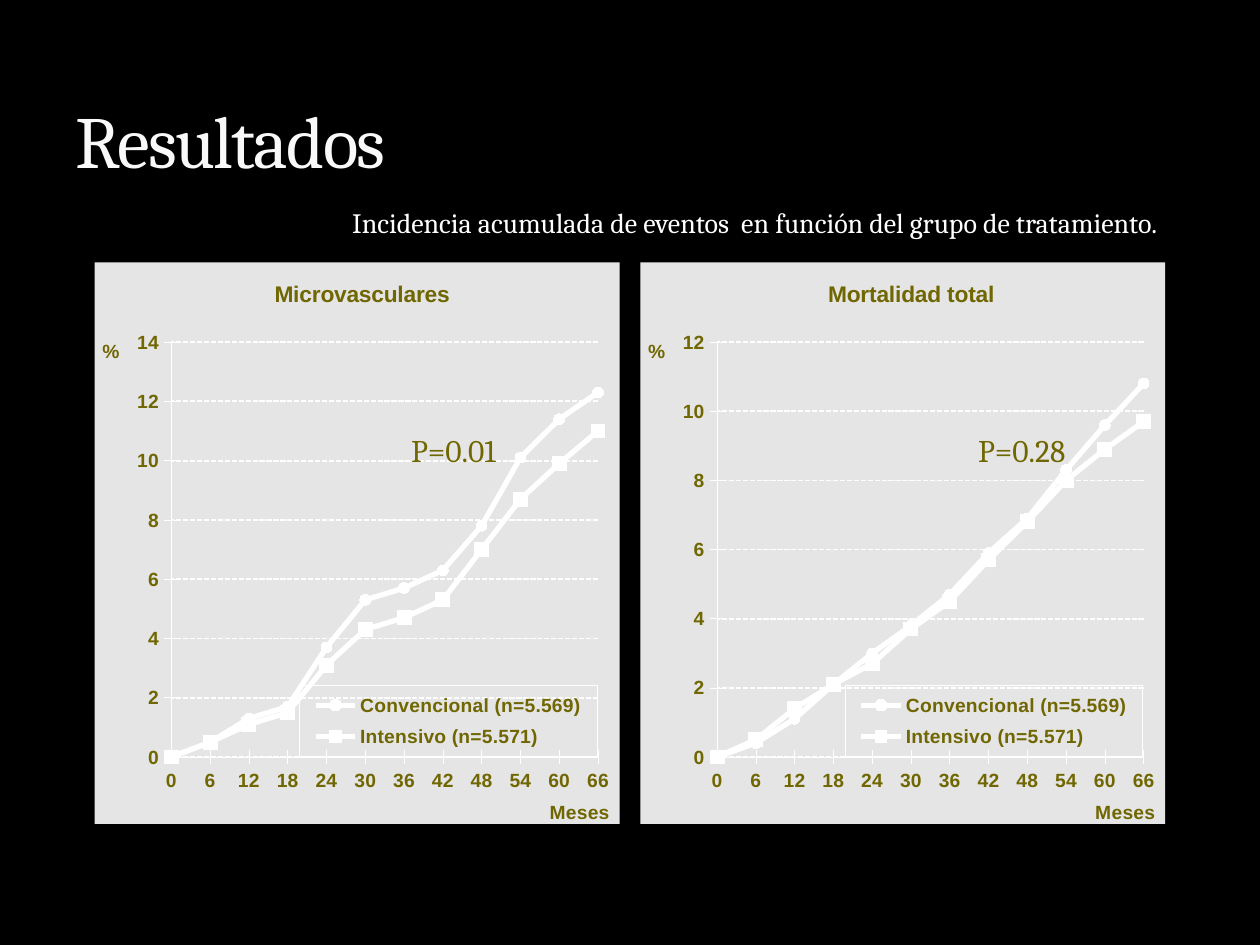
from lxml.etree import SubElement
from pptx import Presentation
from pptx.chart.data import CategoryChartData
from pptx.dml.color import RGBColor
from pptx.enum.chart import XL_CHART_TYPE as ChartType, XL_LEGEND_POSITION as LegendPosition
from pptx.enum.chart import XL_MARKER_STYLE as Marker, XL_TICK_MARK as TickMark
from pptx.enum.dml import MSO_LINE_DASH_STYLE as Dash
from pptx.enum.text import MSO_ANCHOR as Anchor, PP_ALIGN as Align
from pptx.oxml import parse_xml
from pptx.oxml.ns import nsdecls, qn
from pptx.util import Cm, Pt

BLACK = RGBColor(0x00, 0x00, 0x00)
WHITE = RGBColor(0xFF, 0xFF, 0xFF)
OFF_WHITE = RGBColor(0xF9, 0xF9, 0xF9)
OLIVE = RGBColor(0x70, 0x67, 0x02)
GREY = RGBColor(0xE5, 0xE5, 0xE5)

TITLE = "Resultados"
SUBTITLE = "Incidencia acumulada de eventos  en función del grupo de tratamiento. "
MONTHS = [str(month) for month in range(0, 67, 6)]
GROUPS = [
    ("Convencional (n=5.569)", Marker.CIRCLE, 6),
    ("Intensivo (n=5.571)", Marker.SQUARE, 8),
]
PANELS = [
    {
        "title": "Microvasculares", "title_x": 0.335, "maximum": 14,
        "p_value": "P=0.01", "p_left": 8.04,
        "values": [
            (0, 0.5, 1.3, 1.7, 3.7, 5.3, 5.7, 6.3, 7.8, 10.1, 11.4, 12.3),
            (0, 0.5, 1.1, 1.5, 3.1, 4.3, 4.7, 5.3, 7, 8.7, 9.9, 11),
        ],
    },
    {
        "title": "Mortalidad total", "title_x": 0.35, "maximum": 12,
        "p_value": "P=0.28", "p_left": 19.47,
        "values": [
            (0, 0.4, 1.1, 2.1, 3, 3.8, 4.7, 5.9, 6.9, 8.3, 9.6, 10.8),
            (0, 0.5, 1.4, 2.1, 2.7, 3.7, 4.5, 5.7, 6.8, 8, 8.9, 9.7),
        ],
    },
]
CHART_LEFT, CHART_TOP, CHART_WIDTH, CHART_HEIGHT = 1.91, 5.29, 10.58, 11.43
CHART_PITCH = 11


def add_text(slide, text, box, size, color, align=Align.LEFT, anchor=Anchor.TOP, wrap=True):
    shape = slide.shapes.add_textbox(*(Cm(length) for length in box))
    frame = shape.text_frame
    frame.text = text
    frame.word_wrap = wrap
    frame.vertical_anchor = anchor
    paragraph = frame.paragraphs[0]
    paragraph.alignment = align
    font = paragraph.runs[0].font
    font.name, font.size, font.color.rgb = "Cambria", Pt(size), color
    return font


def set_layout(element, index, x, y, width=None, height=None, inner=False):
    for old in element.findall(qn("c:layout")):
        element.remove(old)
    layout = parse_xml(f"<c:layout {nsdecls('c')}/>")
    manual = SubElement(layout, qn("c:manualLayout"))
    settings = [("layoutTarget", "inner")] if inner else []
    settings += [("xMode", "edge"), ("yMode", "edge"), ("x", x), ("y", y)]
    if width:
        settings += [("w", width), ("h", height)]
    for tag, value in settings:
        SubElement(manual, qn(f"c:{tag}")).set("val", str(value))
    element.insert(index, layout)


def style_font(font, size):
    font.name, font.size, font.bold = "Arial", Pt(size), True
    font.color.rgb = OLIVE


def set_title(title, text, size, x, y):
    title.text_frame.text = text
    style_font(title.text_frame.paragraphs[0].runs[0].font, size)
    set_layout(title._element, 1, x, y)


def style_axis(axis, title, x, y):
    axis.major_tick_mark = TickMark.CROSS
    axis.minor_tick_mark = TickMark.NONE
    axis.format.line.color.rgb = WHITE
    axis.format.line.width = Pt(0.25)
    set_title(axis.axis_title, title, 11, x, y)


def add_panel(slide, panel, left):
    data = CategoryChartData()
    data.categories = MONTHS
    for (name, _, _), values in zip(GROUPS, panel["values"]):
        data.add_series(name, values)
    chart = slide.shapes.add_chart(
        ChartType.LINE_MARKERS, Cm(left), Cm(CHART_TOP), Cm(CHART_WIDTH), Cm(CHART_HEIGHT), data
    ).chart
    style_font(chart.font, 11)
    chart_element = chart._chartSpace.find(qn("c:chart"))
    chart_element.addnext(parse_xml(
        f'<c:spPr {nsdecls("c", "a")}><a:solidFill><a:srgbClr val="{GREY}"/></a:solidFill>'
        "<a:ln><a:noFill/></a:ln></c:spPr>"
    ))
    set_layout(chart_element.find(qn("c:plotArea")), 0, 0.146, 0.142, 0.813, 0.739, inner=True)
    chart.has_title = True
    set_title(chart.chart_title, panel["title"], 13, panel["title_x"], 0.025)

    style_axis(chart.category_axis, "Meses", 0.86, 0.95)
    axis = chart.value_axis
    style_axis(axis, "%", 0.008, 0.128)
    axis.axis_title.text_frame._txBody.bodyPr.set("rot", "0")
    axis.minimum_scale, axis.maximum_scale, axis.major_unit = 0, panel["maximum"], 2
    axis.tick_labels.number_format = "0"
    axis.tick_labels.number_format_is_linked = False
    axis._element.find(qn("c:crosses")).addnext(
        parse_xml(f'<c:crossBetween {nsdecls("c")} val="midCat"/>')
    )
    grid = axis.major_gridlines.format.line
    grid.color.rgb, grid.width, grid.dash_style = WHITE, Pt(1), Dash.SQUARE_DOT

    chart.plots[0].vary_by_categories = False
    for series, (_, marker, size) in zip(chart.series, GROUPS):
        series.smooth = False
        series.format.line.color.rgb = WHITE
        series.format.line.width = Pt(3)
        series.marker.style, series.marker.size = marker, size
        series.marker.format.fill.solid()
        series.marker.format.fill.fore_color.rgb = WHITE
        series.marker.format.line.color.rgb = WHITE

    chart.has_legend = True
    chart.legend.position = LegendPosition.RIGHT
    chart.legend.include_in_layout = False
    style_font(chart.legend.font, 11)
    legend = chart.legend._element
    set_layout(legend, 1, 0.39, 0.753, 0.567, 0.127)
    legend.find(qn("c:txPr")).addprevious(parse_xml(
        f'<c:spPr {nsdecls("c", "a")}><a:noFill/><a:ln w="3175"><a:solidFill>'
        f'<a:srgbClr val="{WHITE}"/></a:solidFill></a:ln></c:spPr>'
    ))
    add_text(slide, panel["p_value"], (panel["p_left"], 8.56, 2.74, 1.02), 18, OLIVE)


def main():
    presentation = Presentation()
    presentation.slide_width, presentation.slide_height = Cm(25.4), Cm(19.05)
    slide = presentation.slides.add_slide(presentation.slide_layouts[6])
    slide.background.fill.solid()
    slide.background.fill.fore_color.rgb = BLACK
    font = add_text(slide, TITLE, (1.27, 0.43, 22.86, 3.38), 42, OFF_WHITE, anchor=Anchor.BOTTOM)
    font._element.set("spc", "-100")
    add_text(slide, SUBTITLE, (5.31, 4.01, 18.39, 0.94), 16, WHITE, align=Align.RIGHT, wrap=False)
    for index, panel in enumerate(PANELS):
        add_panel(slide, panel, CHART_LEFT + index * CHART_PITCH)
    presentation.save("out.pptx")


if __name__ == "__main__":
    main()
